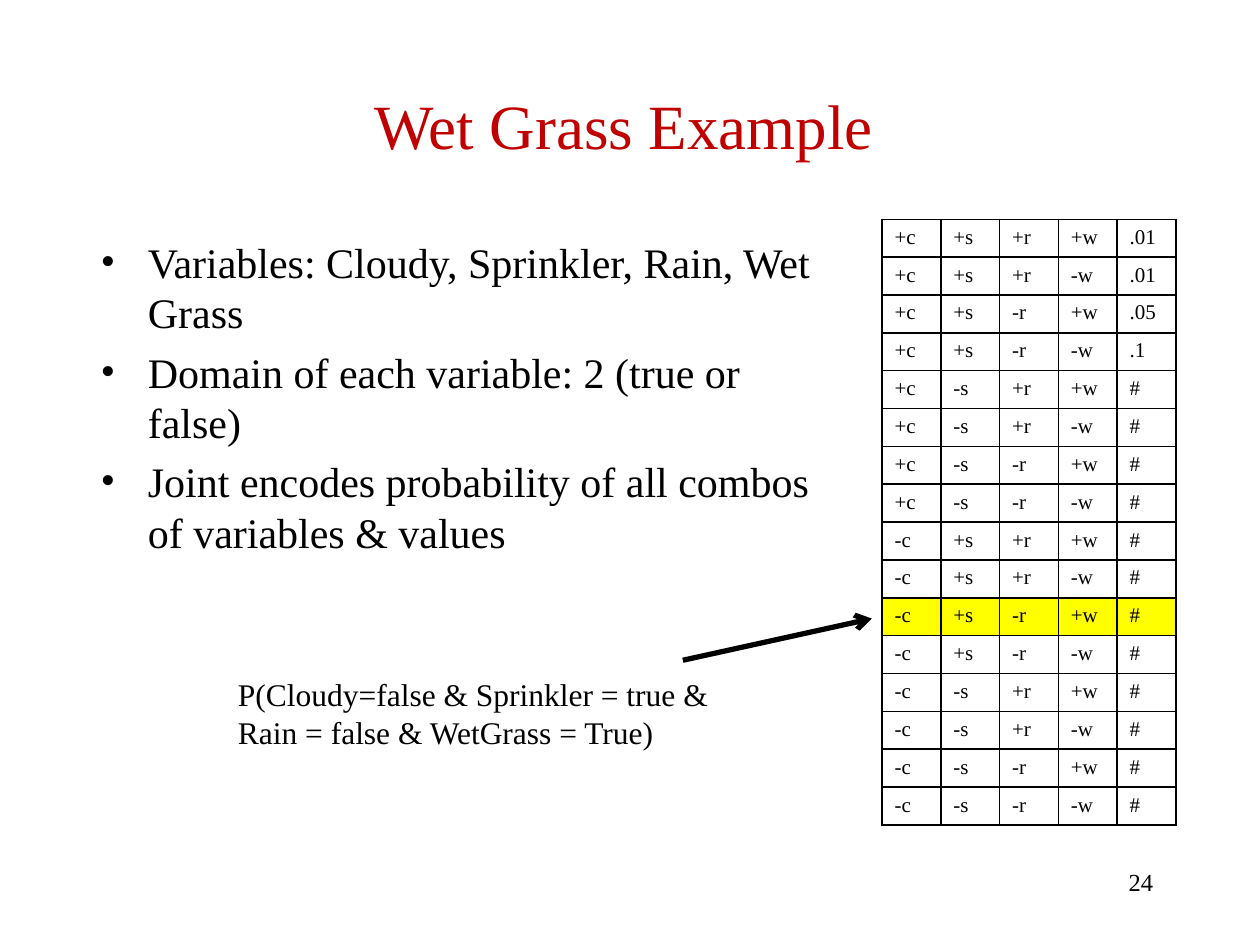
import pptx
import pptx.util
import pptx.dml.color
import pptx.enum.text
import pptx.enum.shapes
import pptx.oxml.ns
import lxml.etree

Pt = pptx.util.Pt
RGBColor = pptx.dml.color.RGBColor
ALIGN = pptx.enum.text.PP_ALIGN
ANCHOR = pptx.enum.text.MSO_ANCHOR
qn = pptx.oxml.ns.qn

BLACK = RGBColor(0, 0, 0)
RED = RGBColor(0xC0, 0, 0)
YELLOW = RGBColor(0xFF, 0xFF, 0)
FACE = "Times New Roman"


def write(frame, text, size=24, color=BLACK, align=ALIGN.LEFT, bullet=False, gap=0):
    """Fill a text frame, one paragraph for each line of text."""
    frame.word_wrap = True
    for i, line in enumerate(text.split("\n")):
        para = frame.paragraphs[0] if i == 0 else frame.add_paragraph()
        if bullet:
            props = para._p.get_or_add_pPr()
            props.set("marL", str(Pt(27)))
            props.set("indent", str(Pt(-27)))
            lxml.etree.SubElement(props, qn("a:buFont"), typeface=FACE)
            lxml.etree.SubElement(props, qn("a:buChar"), char="•")
        para.alignment = align
        para.space_before = Pt(gap if i else 0)
        run = para.add_run()
        run.text = line
        run.font.name = FACE
        run.font.size = Pt(size)
        run.font.color.rgb = color


deck = pptx.Presentation()
deck.slide_width, deck.slide_height = Pt(720), Pt(540)
slide = deck.slides.add_slide(deck.slide_layouts[6])
shapes = slide.shapes

# Title
title = shapes.add_textbox(Pt(50.4), Pt(26), Pt(612), Pt(90)).text_frame
title.vertical_anchor = ANCHOR.MIDDLE
write(title, "Wet Grass Example", size=36, color=RED, align=ALIGN.CENTER)

# Bullet list
body = shapes.add_textbox(Pt(50.4), Pt(126.7), Pt(437.8), Pt(344)).text_frame
body.margin_top = Pt(8.5)
write(body, "Variables: Cloudy, Sprinkler, Rain, Wet Grass\n"
      "Domain of each variable: 2 (true or false)\n"
      "Joint encodes probability of all combos of variables & values",
      bullet=True, gap=5)

# Slide number
number = shapes.add_textbox(Pt(516.2), Pt(491.8), Pt(149.8), Pt(36)).text_frame
write(number, "24", size=14, align=ALIGN.RIGHT)

# Joint table: every combination of the four signs
odds = [".01", ".01", ".05", ".1"] + ["#"] * 12
rows = [[a + "c", b + "s", c + "r", d + "w"]
        for a in "+-" for b in "+-" for c in "+-" for d in "+-"]
marked = ["-c", "+s", "-r", "+w"]
grid = shapes.add_table(16, 5, Pt(504), Pt(125.3), Pt(168), Pt(329.12)).table
grid.first_row = grid.horz_banding = False
for col in grid.columns:
    col.width = Pt(33.6)
for r, row in enumerate(rows):
    grid.rows[r].height = Pt(20.57)
    for c, text in enumerate(row + [odds[r]]):
        cell = grid.cell(r, c)
        write(cell.text_frame, text, size=12)
        props = cell._tc.get_or_add_tcPr()
        for side in ("lnL", "lnR", "lnT", "lnB"):
            edge = lxml.etree.SubElement(props, qn("a:" + side), w=str(Pt(1)))
            fill = lxml.etree.SubElement(edge, qn("a:solidFill"))
            lxml.etree.SubElement(fill, qn("a:srgbClr"), val=str(BLACK))
        if row == marked:
            cell.fill.solid()
            cell.fill.fore_color.rgb = YELLOW
        else:
            cell.fill.background()

# Note on the marked row
note = shapes.add_textbox(Pt(128.9), Pt(382.3), Pt(293.8), Pt(51)).text_frame
write(note, "P(Cloudy=false & Sprinkler = true & Rain = false & WetGrass = True)", size=18)

# Arrow from the note to the table
arrow = shapes.add_connector(pptx.enum.shapes.MSO_CONNECTOR.STRAIGHT,
                             Pt(390.2), Pt(377.3), Pt(498.2), Pt(353.5))
arrow.line.color.rgb = BLACK
arrow.line.width = Pt(3)
lxml.etree.SubElement(arrow.line._get_or_add_ln(), qn("a:tailEnd"), type="arrow")
lxml.etree.SubElement(arrow._element.spPr, qn("a:effectLst"))

deck.save("out.pptx")
